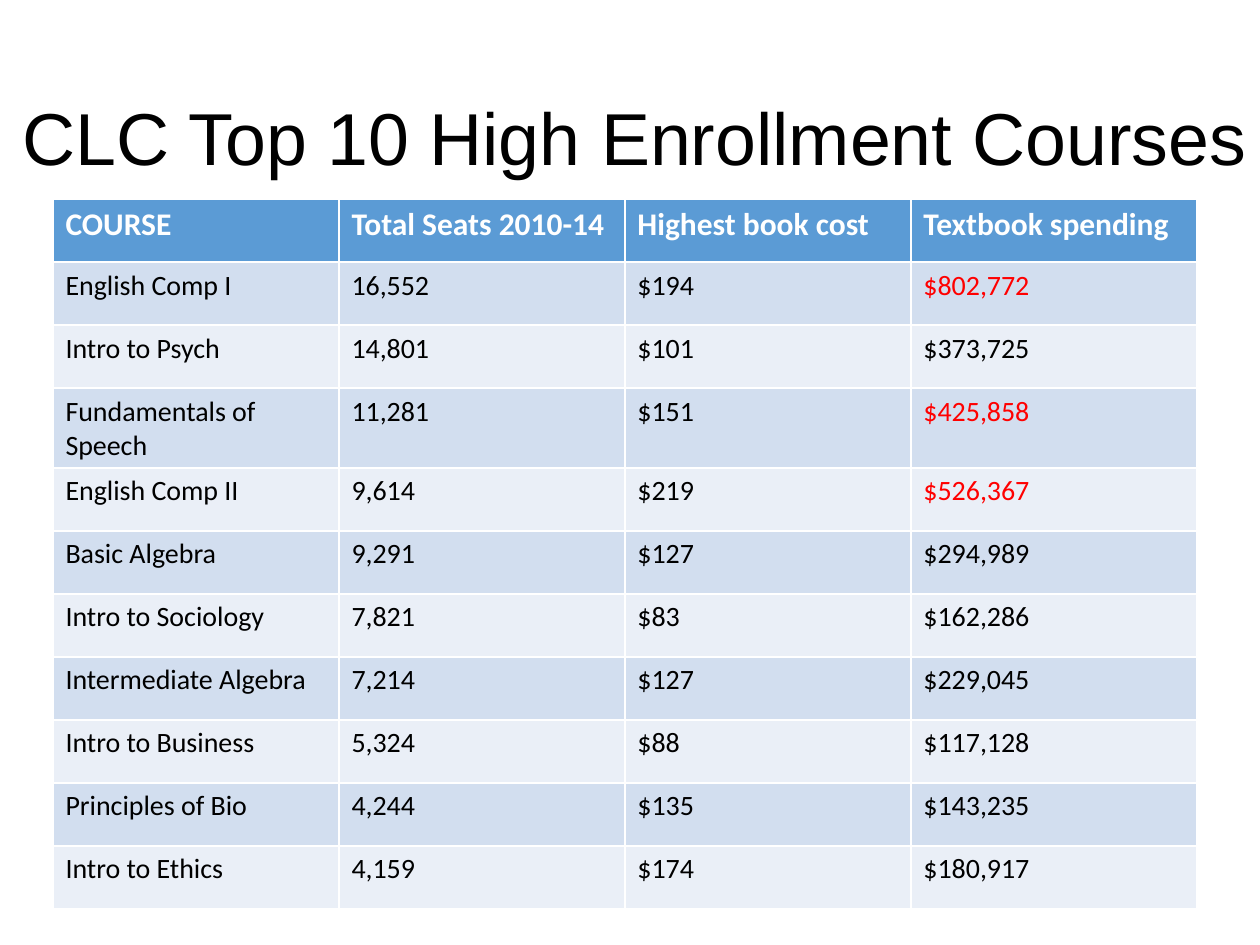
import pptx
import pptx.dml.color
import pptx.enum.text
import pptx.util

RGBColor = pptx.dml.color.RGBColor
Inches = pptx.util.Inches
Pt = pptx.util.Pt

BLACK = RGBColor(0x00, 0x00, 0x00)
WHITE = RGBColor(0xFF, 0xFF, 0xFF)
RED = RGBColor(0xFF, 0x00, 0x00)
HEADER_BLUE = RGBColor(0x5B, 0x9B, 0xD5)
BANDS = (RGBColor(0xD2, 0xDE, 0xEF), RGBColor(0xEA, 0xEF, 0xF7))

COL_WIDTH = 2.27
ROW_HEIGHT = 0.5

HEADINGS = ("COURSE", "Total Seats 2010-14", "Highest book cost", "Textbook spending")
COURSES = (
    ("English Comp I", "16,552", "$194", "$802,772"),
    ("Intro to Psych", "14,801", "$101", "$373,725"),
    ("Fundamentals of Speech", "11,281", "$151", "$425,858"),
    ("English Comp II", "9,614", "$219", "$526,367"),
    ("Basic Algebra", "9,291", "$127", "$294,989"),
    ("Intro to Sociology", "7,821", "$83", "$162,286"),
    ("Intermediate Algebra", "7,214", "$127", "$229,045"),
    ("Intro to Business", "5,324", "$88", "$117,128"),
    ("Principles of Bio", "4,244", "$135", "$143,235"),
    ("Intro to Ethics", "4,159", "$174", "$180,917"),
)
HIGHLIGHTED = ("$802,772", "$425,858", "$526,367")


def set_text(tf, text, font, size, color, bold=False):
    tf.text = text
    p = tf.paragraphs[0]
    p.font.name = font
    p.font.size = Pt(size)
    p.font.bold = bold
    p.font.color.rgb = color
    return p


def add_title(s, text):
    box = s.shapes.add_textbox(Inches(0.08), Inches(0.4), Inches(10.25), Inches(1.45))
    tf = box.text_frame
    tf.word_wrap = True
    tf.vertical_anchor = pptx.enum.text.MSO_ANCHOR.MIDDLE
    p = set_text(tf, text, "Arial", 42, BLACK)
    p.line_spacing = 0.9


def fill_cell(cell, text, fill, size, color, bold=False):
    cell.fill.solid()
    cell.fill.fore_color.rgb = fill
    set_text(cell.text_frame, text, "Calibri", size, color, bold)


def add_course_table(s):
    rows, cols = len(COURSES) + 1, len(HEADINGS)
    frame = s.shapes.add_table(rows, cols, Inches(0.42), Inches(1.58),
                               Inches(cols * COL_WIDTH), Inches(rows * ROW_HEIGHT))
    table = frame.table

    # Header row
    for c, heading in enumerate(HEADINGS):
        fill_cell(table.cell(0, c), heading, HEADER_BLUE, 18, WHITE, bold=True)

    # Course rows in alternating bands, with the highest spending in red
    for r, course in enumerate(COURSES):
        for c, value in enumerate(course):
            color = RED if value in HIGHLIGHTED else BLACK
            fill_cell(table.cell(r + 1, c), value, BANDS[r % 2], 16, color)


def main():
    prs = pptx.Presentation()
    prs.slide_width, prs.slide_height = Inches(10), Inches(7.5)
    s = prs.slides.add_slide(prs.slide_layouts[6])
    add_title(s, "CLC Top 10 High Enrollment Courses")
    add_course_table(s)
    prs.save("out.pptx")


if __name__ == "__main__":
    main()
